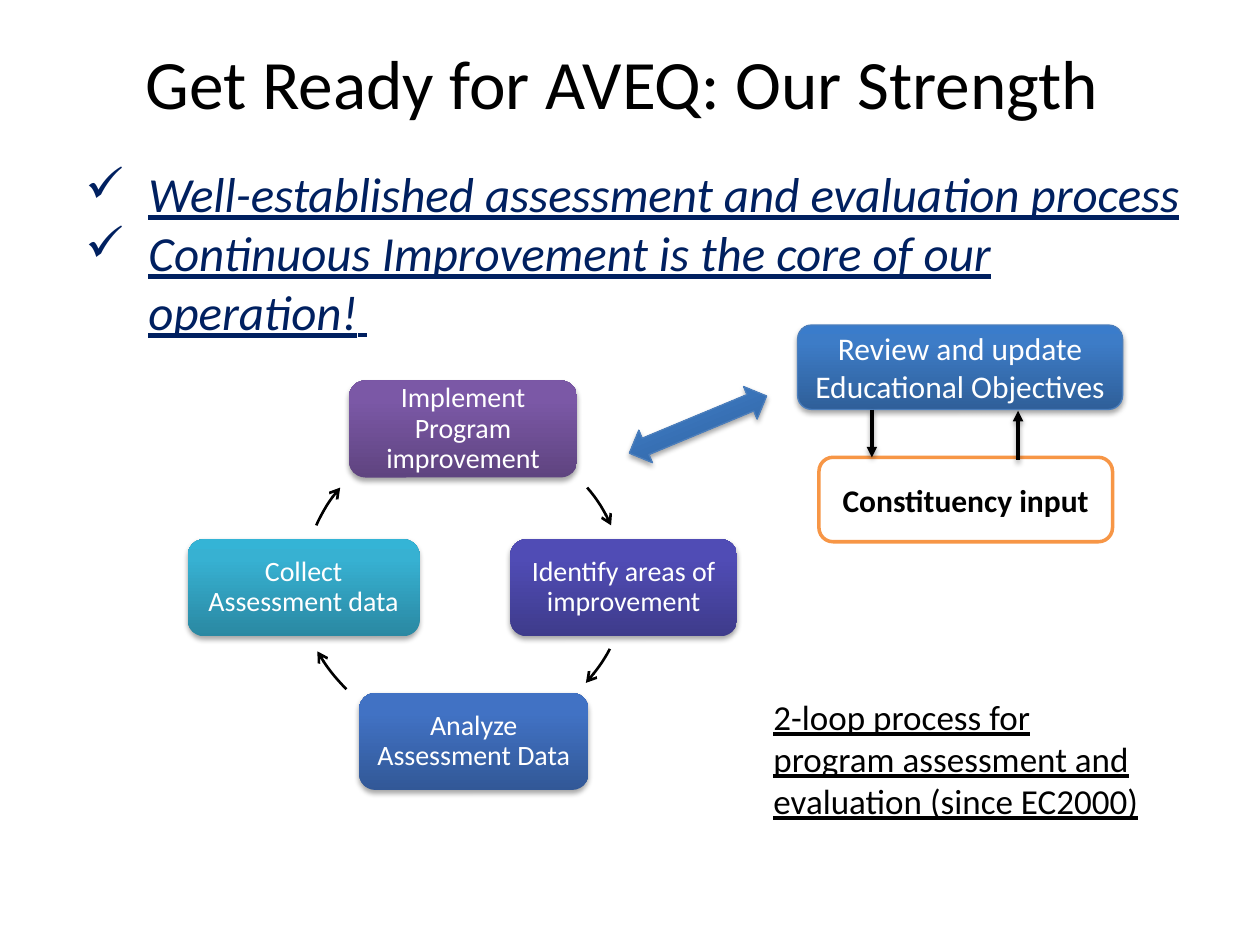
from lxml import etree
from pptx import Presentation
from pptx.dml.color import RGBColor
from pptx.enum import shapes, text
from pptx.oxml.ns import qn
from pptx.util import Inches, Pt

# Content
TITLE = "Get Ready for AVEQ: Our Strength "
POINTS = ["Well-established assessment and evaluation process",
          "Continuous Improvement is the core of our operation!"]
NOTE = "2-loop process for program assessment and evaluation (since EC2000)"
# Loop steps: text, box, gradient from bottom to top
STEPS = [
    ("Implement Program improvement", (2.77, 3.02, 1.81, 0.77), "violet"),
    ("Identify areas of improvement", (4.05, 4.28, 1.8, 0.77), "indigo"),
    ("Analyze Assessment Data", (2.85, 5.5, 1.82, 0.77), "blue"),
    ("Collect Assessment data", (1.49, 4.28, 1.84, 0.77), "teal"),
]
# Curved arrows: start, two control points, end
ARCS = [
    ((4.66, 3.87), (4.74, 3.96), (4.8, 4.06), (4.85, 4.17)),
    ((4.84, 5.15), (4.79, 5.25), (4.72, 5.34), (4.65, 5.42)),
    ((2.75, 5.47), (2.66, 5.38), (2.58, 5.28), (2.52, 5.17)),
    ((2.51, 4.17), (2.56, 4.06), (2.62, 3.96), (2.7, 3.87)),
]
LINKS = [(6.92, 3.25, 6.92, 3.63), (8.08, 3.65, 8.08, 3.26)]

THEME = {
    "font": "Calibri", "ink": "000000", "paper": "FFFFFF", "navy": "002060",
    "edge": "4B7EBC", "orange": "F79646",
    "title": 39.6, "point": 28, "gap": 24, "note": 20, "box": 18, "step": 16,
    "violet": ("5F4480", "7B58A6", "7C57A8"),
    "indigo": ("3E3B8B", "504CB5", "4F4BB8"),
    "blue": ("325897", "4172C4", "3F72C7"),
    "teal": ("2A88A2", "37B1D2", "34B4D6"),
    "steel": ("2F5F99", "3D7CC7", "3A7CCB"),
}
ROUND = shapes.MSO_SHAPE.ROUNDED_RECTANGLE


def rgb(name):
    return RGBColor.from_string(THEME[name])


def sub(node, tag, **attrs):
    return etree.SubElement(node, qn(tag), attrs)


def style(par, size, color="ink", **flags):
    for run in par.runs:
        font = run.font
        font.name, font.size = THEME["font"], Pt(THEME[size])
        font.color.rgb = rgb(color)
        for key, value in flags.items():
            setattr(font, key, value)


def shade(part, alpha=35000):
    props = part._element.spPr
    effect = props.find(qn("a:effectLst"))
    if effect is None:
        effect = sub(props, "a:effectLst")
    shadow = sub(effect, "a:outerShdw", blurRad=str(Pt(3.1)),
                 dist=str(Pt(1.8)), dir="5400000", rotWithShape="0")
    sub(sub(shadow, "a:srgbClr", val=THEME["ink"]), "a:alpha", val=str(alpha))


def blend(shape, name):
    shape.fill.gradient()
    shape.fill.gradient_angle = 90
    stops = shape._element.spPr.find(qn("a:gradFill")).find(qn("a:gsLst"))
    for stop in list(stops):
        stops.remove(stop)
    for pos, color in zip((0, 80000, 100000), THEME[name]):
        sub(sub(stops, "a:gs", pos=str(pos)), "a:srgbClr", val=color)


def edge(part, color, width, tip=None):
    part.line.color.rgb = rgb(color)
    part.line.width = Pt(width)
    if tip:
        sub(part.line._get_or_add_ln(), "a:tailEnd", type=tip)


def block(slide, kind, at, fill, line=None, width=0.75):
    shape = slide.shapes.add_shape(kind, *map(Inches, at))
    shape.shadow.inherit = False
    if fill == "paper":
        shape.fill.solid()
        shape.fill.fore_color.rgb = rgb(fill)
    else:
        blend(shape, fill)
        shade(shape)
    if line:
        edge(shape, line, width)
    else:
        shape.line.fill.background()
    return shape


def label(shape, words, size, color, **flags):
    frame = shape.text_frame
    frame.word_wrap = True
    frame.vertical_anchor = text.MSO_ANCHOR.MIDDLE
    frame.text = words
    par = frame.paragraphs[0]
    par.alignment = text.PP_ALIGN.CENTER
    style(par, size, color, **flags)
    return frame


def curve(a, b, c, d, count=8):
    for i in range(count + 1):
        t = i / count
        s = 1 - t
        yield tuple(Inches(s**3 * p + 3 * s * s * t * q + 3 * s * t * t * r + t**3 * e)
                    for p, q, r, e in zip(a, b, c, d))


def main():
    deck = Presentation()
    deck.slide_width, deck.slide_height = Inches(10), Inches(7.5)
    slide = deck.slides.add_slide(deck.slide_layouts[5])

    # Title
    title = slide.shapes.title
    title.left, title.top, title.width, title.height = map(Inches, (0.5, 0.3, 9, 0.7))
    label(title, TITLE, "title", "ink")

    # Check-marked points
    panel = block(slide, shapes.MSO_SHAPE.RECTANGLE, (0.58, 1.25, 8.92, 1.51), "paper")
    frame = panel.text_frame
    frame.word_wrap = True
    frame.vertical_anchor = text.MSO_ANCHOR.TOP
    frame.auto_size = text.MSO_AUTO_SIZE.SHAPE_TO_FIT_TEXT
    frame.text = "\n".join(POINTS)
    for par in frame.paragraphs:
        par.alignment = text.PP_ALIGN.LEFT
        props = par._p.get_or_add_pPr()
        props.set("marL", str(Inches(0.5)))
        props.set("indent", str(Inches(-0.5)))
        sub(sub(props, "a:buClr"), "a:srgbClr", val=THEME["navy"])
        sub(props, "a:buChar", char="✓")
    tail = frame.paragraphs[-1].add_run()
    tail.text = " "
    for par in frame.paragraphs:
        style(par, "point", "navy", italic=True, underline=True)
    tail.font.size = Pt(THEME["gap"])

    # Improvement loop
    for words, at, fill in STEPS:
        frame = label(block(slide, ROUND, at, fill), words, "step", "paper")
        frame.margin_left = frame.margin_right = Inches(0.07)
        frame.margin_top = frame.margin_bottom = Inches(0.07)
        frame.paragraphs[0].line_spacing = 0.9
    for arc in ARCS:
        start, *rest = curve(*arc)
        pen = slide.shapes.build_freeform(*start)
        pen.add_line_segments(rest, close=False)
        arrow = pen.convert_to_shape()
        arrow.shadow.inherit = False
        arrow.fill.background()
        edge(arrow, "ink", 1.5, "arrow")

    # Objectives loop
    goal = block(slide, ROUND, (6.33, 2.58, 2.58, 0.67), "steel", "edge")
    label(goal, "Review and update Educational Objectives", "box", "paper")
    voice = block(slide, ROUND, (6.5, 3.63, 2.33, 0.67), "paper", "orange", 2)
    label(voice, "Constituency input", "box", "ink", bold=True)
    for ends in LINKS:
        link = slide.shapes.add_connector(shapes.MSO_CONNECTOR.STRAIGHT, *map(Inches, ends))
        edge(link, "ink", 2, "triangle")
        shade(link, 38000)

    # Arrow between the loops
    both = block(slide, shapes.MSO_SHAPE.LEFT_RIGHT_ARROW,
                 (4.95, 3.23, 1.18, 0.28), "steel", "edge")
    both.rotation = 337.4

    # Note
    note = slide.shapes.add_textbox(*map(Inches, (6.04, 5.47, 3.17, 1.11)))
    note.text_frame.word_wrap = True
    note.text_frame.auto_size = text.MSO_AUTO_SIZE.SHAPE_TO_FIT_TEXT
    note.text_frame.text = NOTE
    style(note.text_frame.paragraphs[0], "note", underline=True)

    deck.save("out.pptx")


if __name__ == "__main__":
    main()
